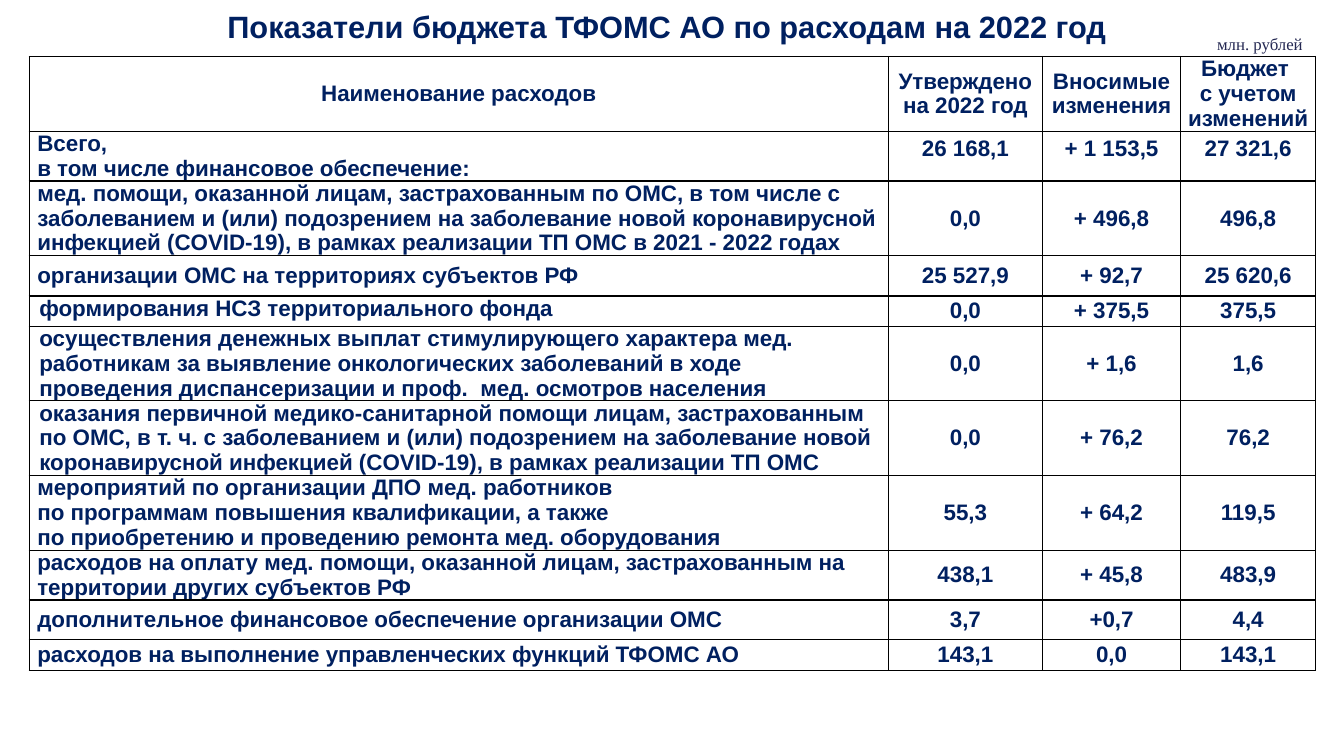
"""Build the slide with the 2022 expenditure table of the health fund."""
from dataclasses import dataclass

from lxml import etree
from pptx import Presentation, table as tb, util as u
from pptx.dml import color
from pptx.enum import text as t
from pptx.oxml import ns
from pptx.text import text as tx

PX = 9144
NAVY = color.RGBColor(0x00, 0x20, 0x60)
SLATE = color.RGBColor(0x24, 0x28, 0x52)
BLACK = color.RGBColor(0x00, 0x00, 0x00)
TOP, MID, LOW = t.MSO_ANCHOR.TOP, t.MSO_ANCHOR.MIDDLE, t.MSO_ANCHOR.BOTTOM
LEFT, MIDDLE, RIGHT = t.PP_ALIGN.LEFT, t.PP_ALIGN.CENTER, t.PP_ALIGN.RIGHT
COLS = (852, 153, 137, 134)


@dataclass
class Row:
    """Texts of a table row, with its height, anchors and insets in px."""
    high: int
    name: str
    sums: tuple[str, str, str]
    side: int = 8
    hold: t.MSO_ANCHOR = MID
    sides: tuple[int, int, int] = (8, 8, 8)
    pad: int = 0
    anchor: t.MSO_ANCHOR = MID
    align: t.PP_ALIGN = LEFT


ROWS = (
    Row(69, "Наименование расходов",
        ("Утверждено\nна 2022 год", "Вносимые изменения", "Бюджет \nс учетом изменений"),
        sides=(6, 6, 6), align=MIDDLE),
    Row(46, "Всего,\nв том числе финансовое обеспечение:",
        ("26 168,1", "+ 1 153,5", "27 321,6"),
        hold=LOW, sides=(0, 13, 13), pad=5, anchor=TOP),
    Row(46, "мед. помощи, оказанной лицам, застрахованным по ОМС, в том числе с "
        "заболеванием и (или) подозрением на заболевание новой коронавирусной "
        "инфекцией (COVID-19), в рамках реализации ТП ОМС в 2021 - 2022 годах",
        ("0,0", "+ 496,8", "496,8"), hold=LOW, sides=(0, 13, 13), pad=5),
    Row(40, "организации ОМС на территориях субъектов РФ",
        ("25 527,9", "+ 92,7", "25 620,6")),
    Row(30, "формирования НСЗ территориального фонда",
        ("0,0", "+ 375,5", "375,5"), side=10, hold=TOP),
    Row(69, "осуществления денежных выплат стимулирующего характера мед. "
        "работникам за выявление онкологических заболеваний в ходе "
        "проведения диспансеризации и проф.  мед. осмотров населения",
        ("0,0", "+ 1,6", "1,6"), side=10, hold=TOP),
    Row(69, "оказания первичной медико-санитарной помощи лицам, застрахованным "
        "по ОМС, в т. ч. с заболеванием и (или) подозрением на заболевание новой "
        "коронавирусной инфекцией (COVID-19), в рамках реализации ТП ОМС",
        ("0,0", "+ 76,2", "76,2"), side=10, hold=TOP),
    Row(69, "мероприятий по организации ДПО мед. работников \v"
        "по программам повышения квалификации, а также \v"
        "по приобретению и проведению ремонта мед. оборудования",
        ("55,3", "+ 64,2", "119,5")),
    Row(46, "расходов на оплату мед. помощи, оказанной лицам, застрахованным на "
        "территории других субъектов РФ", ("438,1", "+ 45,8", "483,9")),
    Row(39, "дополнительное финансовое обеспечение организации ОМС",
        ("3,7", "+0,7", "4,4")),
    Row(31, "расходов на выполнение управленческих функций ТФОМС АО",
        ("143,1", "0,0", "143,1")),
)


def px(*nums: int) -> list[u.Emu]:
    """Turn px into EMU."""
    return [u.Emu(num * PX) for num in nums]


def style(frame: tx.TextFrame, size: int, align: t.PP_ALIGN,
          face: str = "Arial", tint: color.RGBColor = NAVY, bold: bool = True) -> None:
    """Format all the text of a frame."""
    for para in frame.paragraphs:
        para.alignment = align
        for gap in para._p.findall(ns.qn("a:br")):
            etree.SubElement(gap, ns.qn("a:rPr"), sz=str(size * 100))
        for run in para.runs:
            font = run.font
            font.name, font.size, font.bold = face, u.Pt(size), bold
            font.color.rgb = tint


def edge(cell: tb._Cell) -> None:
    """Give a cell thin black borders and no fill."""
    props = cell._tc.get_or_add_tcPr()
    for side in "LRTB":
        line = etree.SubElement(props, ns.qn(f"a:ln{side}"), w=str(u.Pt(1)))
        fill = etree.SubElement(line, ns.qn("a:solidFill"))
        etree.SubElement(fill, ns.qn("a:srgbClr"), val=str(BLACK))
    cell.fill.background()


def write(cell: tb._Cell, words: str, side: int, pad: int,
          anchor: t.MSO_ANCHOR, align: t.PP_ALIGN) -> None:
    """Fill and format one cell."""
    cell.text_frame.text = words
    cell.margin_left, cell.margin_right, cell.margin_top, cell.margin_bottom = px(
        side, side, pad, pad)
    cell.vertical_anchor = anchor
    style(cell.text_frame, 16, align)
    edge(cell)


def main() -> None:
    """Draw the slide and save it."""
    deck = Presentation()
    deck.slide_width, deck.slide_height = px(1333, 750)
    slide = deck.slides.add_slide(deck.slide_layouts[5])

    title = slide.shapes.title
    title.left, title.top, title.width, title.height = px(37, 0, 1249, 39)
    frame = title.text_frame
    frame.text = "Показатели бюджета ТФОМС АО по расходам на 2022 год"
    frame.auto_size, frame.vertical_anchor = t.MSO_AUTO_SIZE.NONE, TOP
    frame.margin_top, frame.margin_bottom = px(8, 0)
    style(frame, 22, MIDDLE)

    holder = slide.shapes.add_table(len(ROWS), len(COLS), *px(29, 56, 1276, 647))
    grid = holder.table
    grid.first_row = grid.horz_banding = False
    for col, wide in zip(grid.columns, COLS):
        col.width = u.Emu(wide * PX)
    for line, row in zip(grid.rows, ROWS):
        line.height = u.Emu(row.high * PX)
        head, *rest = line.cells
        write(head, row.name, row.side, 0, row.hold, row.align)
        for cell, words, side in zip(rest, row.sums, row.sides):
            write(cell, words, side, row.pad, row.anchor, MIDDLE)
    holder.height = u.Emu(647 * PX)

    unit = slide.shapes.add_textbox(*px(1155, 29, 147, 30)).text_frame
    unit.text = "млн. рублей"
    unit.word_wrap, unit.auto_size = True, t.MSO_AUTO_SIZE.SHAPE_TO_FIT_TEXT
    style(unit, 12, RIGHT, "Times New Roman", SLATE, False)

    deck.save("out.pptx")


if __name__ == "__main__":
    main()
